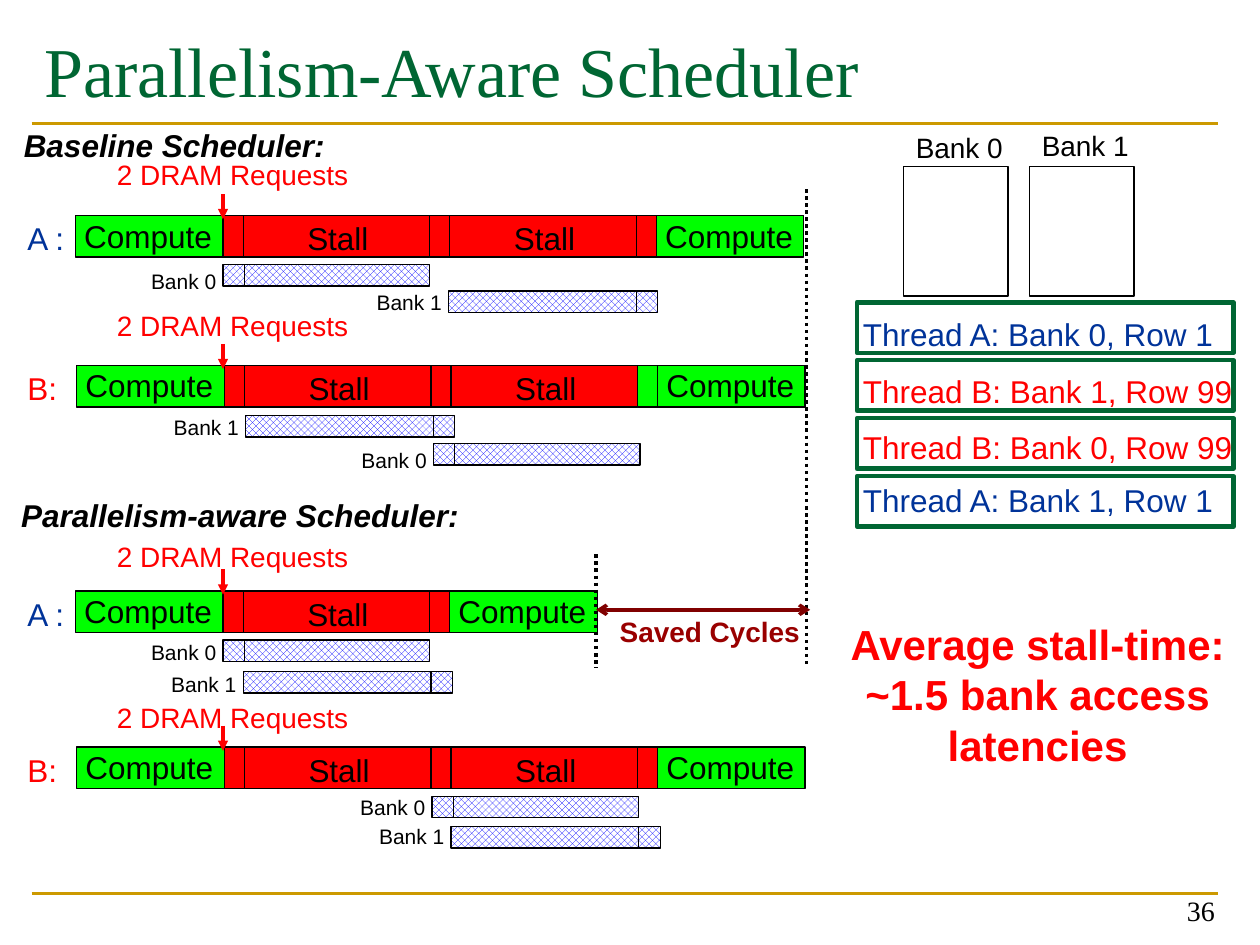
from dataclasses import dataclass

from lxml.etree import SubElement
from pptx import Presentation
from pptx.dml.color import RGBColor
from pptx.enum.dml import MSO_LINE as Dash, MSO_PATTERN as Pattern
from pptx.enum.shapes import MSO_CONNECTOR as Connector, MSO_SHAPE as Shape
from pptx.enum.text import MSO_ANCHOR as Anchor, MSO_AUTO_SIZE as AutoSize, PP_ALIGN as Align
from pptx.oxml.ns import qn
from pptx.util import Inches, Pt


@dataclass(frozen=True)
class Theme:
    sans: str = "Arial"
    serif: str = "Times New Roman"
    black: str = "000000"
    white: str = "FFFFFF"
    red: str = "FF0000"
    blue: str = "003399"
    green: str = "006633"
    gold: str = "CC9900"
    compute: str = "00FF00"
    hatch: str = "0000FF"
    saving: str = "990000"
    saving_arrow: str = "800000"
    title: int = 40
    verdict: int = 24
    body: int = 18
    note: int = 16
    small: int = 12


class SchedulerSlide:
    """Draws scheduling diagrams on one slide in one style."""

    SHORT, LONG, COMPUTE, STEP = 0.17, 1.48, 1.17, 0.16
    BAR, ACCESS = 0.33, 1.49

    def __init__(self, slide, theme):
        self.slide = slide
        self.theme = theme

    def add_words(self, frame, words, size, color, font=None, bold=None, italic=None, align=None):
        paragraph = frame.paragraphs[0]
        paragraph.alignment = align
        run = paragraph.add_run()
        run.text = words
        run.font.name = font or self.theme.sans
        run.font.size = Pt(size)
        run.font.bold = bold
        run.font.italic = italic
        run.font.color.rgb = RGBColor.from_string(color)

    def title(self, words, *box):
        heading = self.slide.shapes.title
        heading.left, heading.top, heading.width, heading.height = map(Inches, box)
        heading.text_frame.vertical_anchor = Anchor.TOP
        self.add_words(heading.text_frame, words, self.theme.title, self.theme.green,
                       self.theme.serif, align=Align.LEFT)

    def text(self, words, x, y, w, h, size, color, wrap=False, anchor=Anchor.TOP, **style):
        frame = self.slide.shapes.add_textbox(*map(Inches, (x, y, w, h))).text_frame
        frame.word_wrap = wrap
        frame.auto_size = AutoSize.NONE if anchor == Anchor.BOTTOM else AutoSize.SHAPE_TO_FIT_TEXT
        frame.vertical_anchor = anchor
        self.add_words(frame, words, size, color, **style)

    def box(self, x, y, w, h, fill=None, line=Theme.black, weight=0.75, hatched=False):
        rect = self.slide.shapes.add_shape(Shape.RECTANGLE, *map(Inches, (x, y, w, h)))
        rect.shadow.inherit = False
        if hatched:
            rect.fill.patterned()
            rect.fill.pattern = Pattern.LARGE_CHECKER_BOARD
            rect.fill.fore_color.rgb = RGBColor.from_string(self.theme.hatch)
            rect.fill.back_color.rgb = RGBColor.from_string(self.theme.white)
        elif fill:
            rect.fill.solid()
            rect.fill.fore_color.rgb = RGBColor.from_string(fill)
        else:
            rect.fill.background()
        if line:
            rect.line.color.rgb = RGBColor.from_string(line)
            rect.line.width = Pt(weight)
        else:
            rect.line.fill.background()
        return rect

    def line(self, x1, y1, x2, y2, color, weight, dash=None, head=None, tail=None):
        link = self.slide.shapes.add_connector(Connector.STRAIGHT, *map(Inches, (x1, y1, x2, y2)))
        link.line.color.rgb = RGBColor.from_string(color)
        link.line.width = Pt(weight)
        if dash:
            link.line.dash_style = dash
        properties = link.element.spPr
        outline = properties.find(qn("a:ln"))
        for end, kind in (("a:headEnd", head), ("a:tailEnd", tail)):
            if kind:
                SubElement(outline, qn(end)).set("type", kind)
        SubElement(properties, qn("a:effectLst"))

    def compute(self, x, y):
        self.box(x, y, self.COMPUTE, self.BAR, self.theme.compute)
        self.text("Compute", x - 0.03, y - 0.04, 1.22, 0.4, self.theme.body, self.theme.black)

    def stall(self, x, y):
        self.box(x, y, self.LONG, self.BAR, self.theme.red)
        self.text("Stall", x + 0.41, y - 0.02, 0.69, 0.4, self.theme.body, self.theme.black)

    def timeline(self, thread, color, x, y, request_y, stalls, last_gap):
        theme = self.theme
        self.text(thread, 0.12, y - 0.02, 0.5, 0.4, theme.body, color)
        self.compute(x, y)
        x += self.COMPUTE
        gaps = [theme.red] * stalls + [last_gap]
        for index, gap in enumerate(gaps):
            self.box(x, y, self.SHORT, self.BAR, gap)
            x += self.STEP
            if index < stalls:
                self.stall(x, y)
                x += self.LONG
        self.compute(x, y)
        self.text("2 DRAM Requests", 0.83, request_y, 2.06, 0.37, theme.note, theme.red)
        self.line(1.77, y - 0.17, 1.77, y + 0.03, theme.red, 1.75, tail="triangle")

    def access(self, bank, x, y, label_y):
        """Draws one bank access; Bank 0 has its short part first."""
        short_x, long_x = (x, x + 0.15) if bank == 0 else (x + self.ACCESS, x)
        self.box(long_x, y, self.ACCESS, self.SHORT, hatched=True)
        self.box(short_x, y, self.SHORT, self.SHORT, hatched=True)
        self.text(f"Bank {bank}", x - 0.67, label_y, 0.72, 0.3, self.theme.small, self.theme.black)


def main():
    deck = Presentation()
    deck.slide_width, deck.slide_height = Inches(10), Inches(7.5)
    theme = Theme()
    page = SchedulerSlide(deck.slides.add_slide(deck.slide_layouts[5]), theme)

    for rule_y in (0.98, 7.09):
        page.line(0.25, rule_y, 9.67, rule_y, theme.gold, 1.5)
    page.title("Parallelism-Aware Scheduler", 0.25, 0.17, 9.42, 1.17)
    page.text("36", 7.41, 6.91, 2.33, 0.5, theme.note, theme.black, wrap=True,
              anchor=Anchor.BOTTOM, font=theme.serif, align=Align.RIGHT)

    for bank, label_y in enumerate((0.99, 0.97)):
        page.box(7.17 + bank, 1.32, 0.83, 1.03)
        page.text(f"Bank {bank}", 7.17 + bank, label_y, 0.9, 0.37, theme.note, theme.black)

    requests = (
        ("Thread A: Bank 0, Row 1", 2.45, 3.01, theme.blue),
        ("Thread B: Bank 1, Row 99", 2.9, 3.16, theme.red),
        ("Thread B: Bank 0, Row 99", 3.35, 3.16, theme.red),
        ("Thread A: Bank 1, Row 1", 3.77, 3.01, theme.blue),
    )
    for index, (request, y, width, color) in enumerate(requests):
        page.text(request, 6.75, y, width, 0.4, theme.body, color)
        page.box(6.8, 2.4 + 0.46 * index, 2.99, 0.4, line=theme.green, weight=2.5)

    for scheduler, x, y, width in (
        ("Baseline Scheduler:", 0.09, 0.95, 2.79),
        ("Parallelism-aware Scheduler:", 0.07, 3.89, 3.73),
    ):
        page.text(scheduler, x, y, width, 0.4, theme.body, theme.black,
                  wrap=True, bold=True, italic=True)

    for timeline in (
        ("A :", theme.blue, 0.6, 1.71, 1.2, 2, theme.red),
        ("B:", theme.red, 0.61, 2.9, 2.4, 2, theme.compute),
        ("A :", theme.blue, 0.6, 4.69, 4.23, 1, theme.red),
        ("B:", theme.red, 0.61, 5.93, 5.51, 2, theme.red),
    ):
        page.timeline(*timeline)

    for access in (
        (0, 1.77, 2.1, 2.08), (1, 3.56, 2.31, 2.25),
        (1, 1.95, 3.3, 3.24), (0, 3.44, 3.52, 3.5),
        (0, 1.77, 5.08, 5.03), (1, 1.93, 5.33, 5.28),
        (0, 3.43, 6.32, 6.26), (1, 3.58, 6.56, 6.49),
    ):
        page.access(*access)

    for finish_x, top in ((4.73, 4.4), (6.4, 1.5)):
        page.line(finish_x, top, finish_x, 5.3, theme.black, 2, dash=Dash.ROUND_DOT)
    page.line(4.73, 4.84, 6.43, 4.84, theme.saving_arrow, 2, head="arrow", tail="arrow")
    page.text("Saved Cycles", 4.82, 4.83, 1.83, 0.37, theme.note, theme.saving,
              wrap=True, bold=True)

    verdict = page.box(6.56, 4.86, 3.35, 1.31, theme.white, line=None).text_frame
    verdict.word_wrap = True
    verdict.vertical_anchor = Anchor.TOP
    page.add_words(verdict, "Average stall-time: ~1.5 bank access latencies",
                   theme.verdict, theme.red, bold=True, align=Align.CENTER)

    deck.save("out.pptx")


if __name__ == "__main__":
    main()
